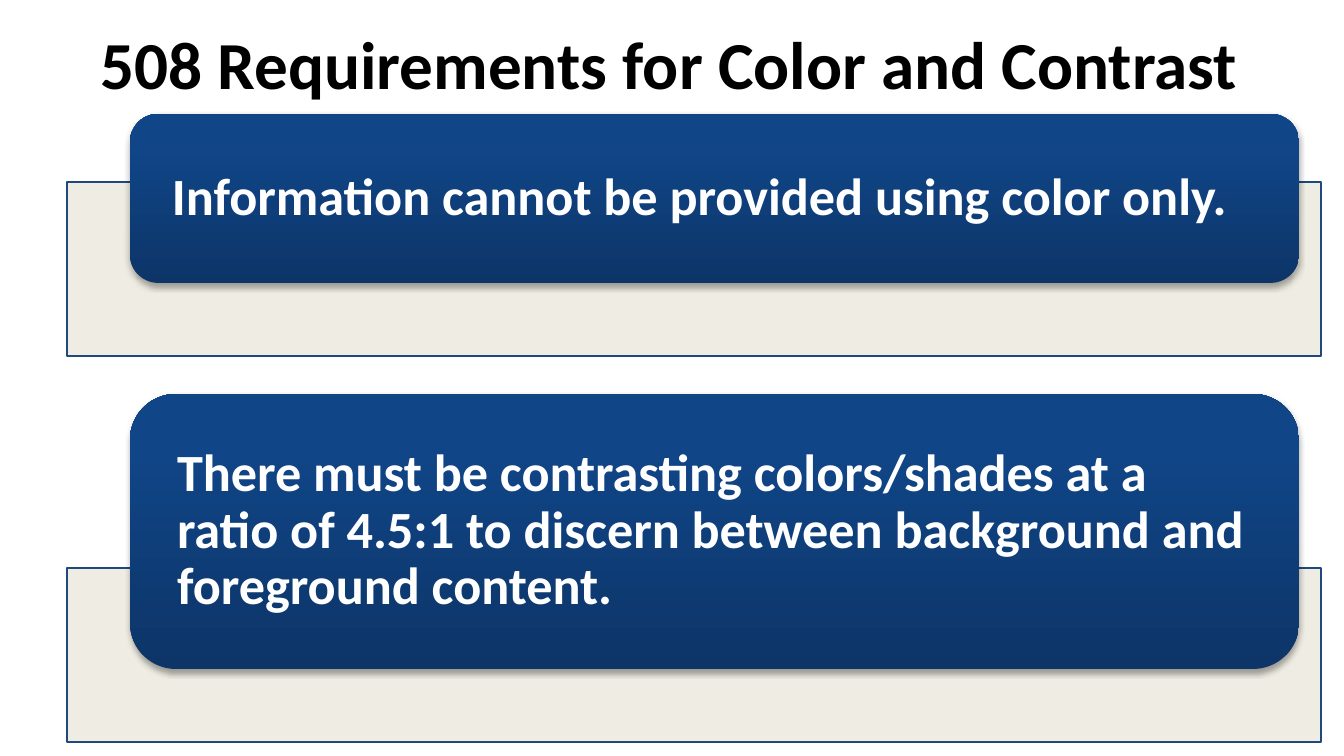
from copy import deepcopy
from dataclasses import dataclass

from pptx import Presentation
from pptx import util as u
from pptx.dml.color import RGBColor
from pptx.enum import shapes, text
from pptx.oxml import ns, parse_xml

PX = 9144000 / 1344  # EMU in one px


def px(length):
    return u.Emu(round(length * PX))


@dataclass(frozen=True)
class Theme:
    font: str = "Calibri"
    title_size: int = 36
    body_size: int = 28
    title: str = "000000"
    body: str = "FFFFFF"
    panel: str = "EEECE1"
    panel_line: str = "1F497D"
    card_stops: tuple = ((0, "0D3568"), (0.8, "104587"), (1, "0E458A"))


class SlideBuilder:
    def __init__(self, page, theme):
        self.page = page
        self.theme = theme

    def shape(self, kind, bounds):
        shape = self.page.shapes.add_shape(kind, *map(px, bounds))
        shape.shadow.inherit = False
        return shape

    def text(self, words, bounds, size, color, align, inset, spacing=1.0):
        box = self.page.shapes.add_textbox(*map(px, bounds))
        frame = box.text_frame
        para = frame.paragraphs[0]
        span = para.add_run()
        span.text = words
        span.font.color.rgb = RGBColor.from_string(color)
        formats = {
            frame: {"word_wrap": True, "vertical_anchor": text.MSO_ANCHOR.MIDDLE,
                    "margin_left": px(inset), "margin_right": px(inset),
                    "margin_top": 0, "margin_bottom": 0},
            para: {"alignment": align, "line_spacing": spacing},
            span.font: {"name": self.theme.font, "size": u.Pt(size), "bold": True},
        }
        for target, values in formats.items():
            for name, value in values.items():
                setattr(target, name, value)

    def panel(self, bounds):
        panel = self.shape(shapes.MSO_SHAPE.RECTANGLE, bounds)
        panel.fill.solid()
        panel.fill.fore_color.rgb = RGBColor.from_string(self.theme.panel)
        panel.line.color.rgb = RGBColor.from_string(self.theme.panel_line)
        panel.line.width = u.Pt(0.75)
        # Slight transparency
        color = panel.element.spPr.find(ns.qn("a:solidFill"))[0]
        color.append(parse_xml(f'<a:alpha {ns.nsdecls("a")} val="90000"/>'))

    def card(self, bounds):
        card = self.shape(shapes.MSO_SHAPE.ROUNDED_RECTANGLE, bounds)
        card.line.fill.background()
        # Gradient from dark at the bottom to lighter at the top
        card.fill.gradient()
        card.fill.gradient_angle = 90
        properties = card.element.spPr
        stop_list = properties.find(ns.qn("a:gradFill")).find(ns.qn("a:gsLst"))
        stop_list.append(deepcopy(stop_list[-1]))
        for stop, (position, color) in zip(card.fill.gradient_stops, self.theme.card_stops):
            stop.position = position
            stop.color.rgb = RGBColor.from_string(color)
        # Soft shadow below
        properties.find(ns.qn("a:effectLst")).append(parse_xml(
            f'<a:outerShdw {ns.nsdecls("a")} blurRad="{u.Pt(3.1)}" dist="{u.Pt(1.8)}"'
            ' dir="5400000" rotWithShape="0"><a:srgbClr val="000000">'
            '<a:alpha val="35000"/></a:srgbClr></a:outerShdw>'))

    def requirement(self, words, top, height):
        left, width, overlap = 130, 1169, 101
        self.panel((67, top + height - overlap, 1254, 174))
        self.card((left, top, width, height))
        # The text area clears the rounded corners
        gap = round(height * 0.0488)
        bounds = (left + gap, top + gap, width - 2 * gap, height - 2 * gap)
        self.text(words, bounds, self.theme.body_size, self.theme.body,
                  text.PP_ALIGN.LEFT, 34, 0.9)


def main():
    deck = Presentation()
    deck.slide_width, deck.slide_height = px(1344), px(756)
    theme = Theme()
    builder = SlideBuilder(deck.slides.add_slide(deck.slide_layouts[6]), theme)

    # Title
    builder.text("508 Requirements for Color and Contrast", (51, 8, 1236, 109),
                 theme.title_size, theme.title, text.PP_ALIGN.CENTER, 13)

    # Requirements
    builder.requirement("Information cannot be provided using color only.", 114, 169)
    builder.requirement("There must be contrasting colors/shades at a ratio of 4.5:1 to discern "
                        "between background and foreground content.", 394, 275)

    deck.save("out.pptx")


if __name__ == "__main__":
    main()
